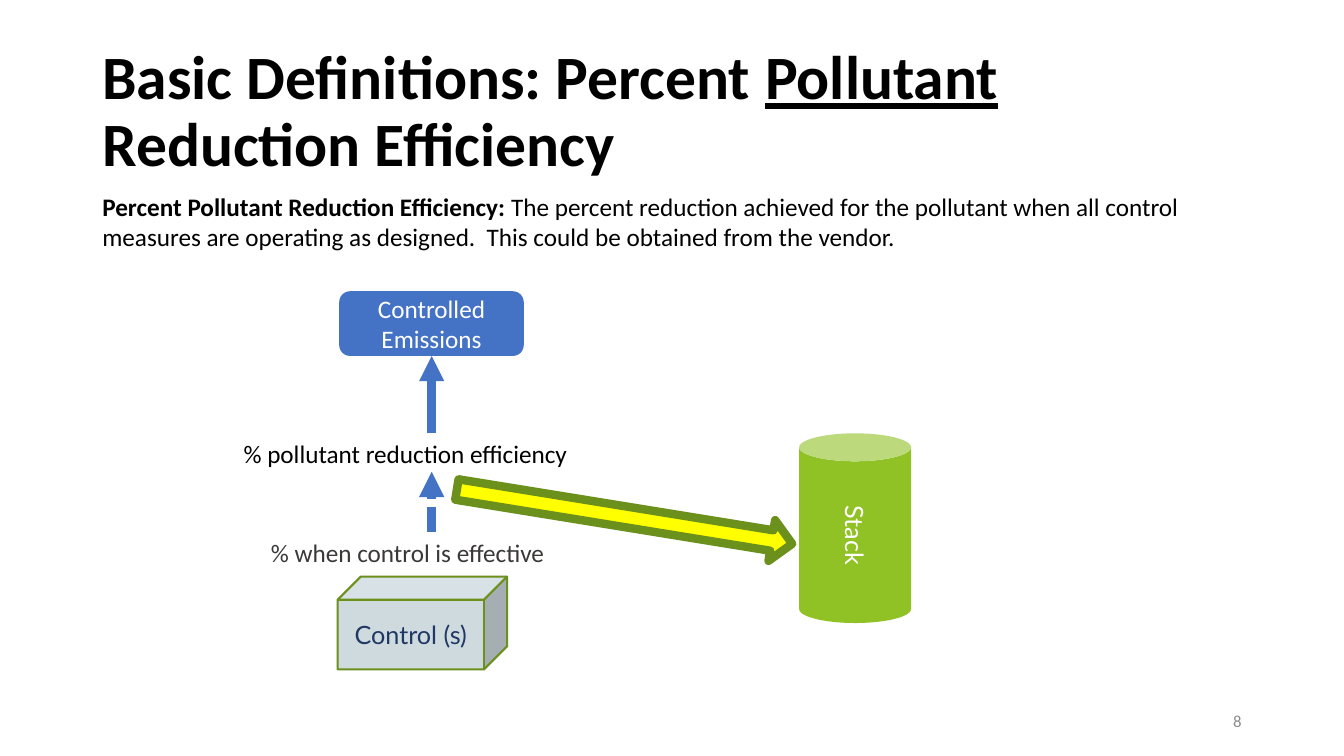
from lxml import etree
from pptx import Presentation
from pptx.dml.color import RGBColor
from pptx.enum.dml import MSO_LINE
from pptx.enum.shapes import MSO_CONNECTOR, MSO_SHAPE
from pptx.enum.text import MSO_ANCHOR, PP_ALIGN
from pptx.oxml.ns import qn
from pptx.util import Cm, Pt

COLORS = {
    "black": "000000", "white": "FFFFFF", "number": "8C8C8C",
    "label": "3B3838", "navy": "203864", "blue": "4472C4",
    "green": "90C226", "dark_green": "6B901C", "steel": "CFDADF",
    "yellow": "FFFF00",
}
TOP, MIDDLE = MSO_ANCHOR.TOP, MSO_ANCHOR.MIDDLE
LEFT, CENTER, RIGHT = PP_ALIGN.LEFT, PP_ALIGN.CENTER, PP_ALIGN.RIGHT
STRAIGHT = MSO_CONNECTOR.STRAIGHT
SQUARE_DOT = MSO_LINE.SQUARE_DOT
CUBE, CAN = MSO_SHAPE.CUBE, MSO_SHAPE.CAN
ROUNDED, RIGHT_ARROW = MSO_SHAPE.ROUNDED_RECTANGLE, MSO_SHAPE.RIGHT_ARROW


def rgb(name):
    return RGBColor.from_string(COLORS[name])


def to_cm(box):
    return [Cm(length) for length in box]


def write_text(shape, runs, size, color, font="Calibri", align=LEFT, anchor=TOP):
    """Fill a shape with one paragraph and return that paragraph."""
    frame = shape.text_frame
    frame.word_wrap = True
    frame.vertical_anchor = anchor
    paragraph = frame.paragraphs[0]
    paragraph.alignment = align
    paragraph.font.size = Pt(size)
    paragraph.font.name = font
    paragraph.font.color.rgb = rgb(color)
    for text in runs:
        paragraph.add_run().text = text
    return paragraph


def add_text(slide, box, runs, size, color, **options):
    return write_text(slide.shapes.add_textbox(*to_cm(box)), runs, size, color, **options)


def add_block(slide, kind, box, fill, line=None, line_width=1.5):
    shape = slide.shapes.add_shape(kind, *to_cm(box))
    shape.shadow.inherit = False
    shape.fill.solid()
    shape.fill.fore_color.rgb = rgb(fill)
    if line:
        shape.line.color.rgb = rgb(line)
        shape.line.width = Pt(line_width)
    else:
        shape.line.fill.background()
    return shape


def add_up_arrow(slide, x, bottom, top, dash=None):
    arrow = slide.shapes.add_connector(STRAIGHT, *to_cm((x, bottom, x, top)))
    arrow.line.color.rgb = rgb("blue")
    arrow.line.width = Pt(6)
    if dash:
        arrow.line.dash_style = dash
    properties = arrow._element.spPr
    etree.SubElement(properties.find(qn("a:ln")), qn("a:tailEnd"), type="triangle")
    etree.SubElement(properties, qn("a:effectLst"))


def add_title(slide, box):
    runs = ["Basic Definitions: Percent ", "Pollutant", " Reduction Efficiency"]
    paragraph = add_text(slide, box, runs, 44, "black", anchor=MIDDLE)
    paragraph.line_spacing = 0.9
    paragraph.font.bold = True
    paragraph.runs[1].font.underline = True


def add_definition(slide, box):
    runs = [
        "Percent Pollutant Reduction Efficiency: ",
        "The percent reduction achieved for the pollutant when all control measures "
        "are operating as designed.  This could be obtained from the vendor.",
    ]
    paragraph = add_text(slide, box, runs, 18, "black")
    paragraph.runs[0].font.bold = True


def add_control_flow(slide, box):
    """Column that rises from the control to the controlled emissions."""
    left, top, width, height = box
    center = left + width / 2
    label_height = 1.02
    efficiency_top, effective_top = top + 3.58, top + 6.07

    # Control at the foot
    control = add_block(slide, CUBE, (left + 2.62, top + height - 2.34, 4.27, 2.34),
                        "steel", "dark_green")
    write_text(control, ["Control (s)"], 18, "navy", "Lato", CENTER, MIDDLE)

    # Emissions at the head
    emissions_height = 1.63
    emissions = add_block(slide, ROUNDED, (center - 2.33, top, 4.65, emissions_height), "blue")
    write_text(emissions, ["Controlled Emissions"], 18, "white", align=CENTER, anchor=MIDDLE)

    # Arrows and the labels between them
    add_up_arrow(slide, center, effective_top, efficiency_top + label_height - 0.05, SQUARE_DOT)
    add_up_arrow(slide, center, efficiency_top, top + emissions_height)
    add_text(slide, (center - 4.3, effective_top, 8.6, label_height),
             ["% when control is effective"], 18, "label")
    add_text(slide, (left, efficiency_top, width, label_height),
             ["% pollutant reduction efficiency"], 18, "black")


def add_stack(slide, box):
    """Stack with the sloping arrow that leads into its left side."""
    left, top, width, height = box
    stack = add_block(slide, CAN, box, "green")
    write_text(stack, ["Stack"], 18, "white", "Lato", CENTER, MIDDLE)
    stack.text_frame._txBody.bodyPr.set("vert", "vert")

    arrow = add_block(slide, RIGHT_ARROW, (left - 8.68, top + 1.58, 8.56, 1.04),
                      "yellow", "dark_green", 6)
    arrow.rotation = 9.2


def add_slide_number(slide, box):
    add_text(slide, box, ["8"], 12, "number", align=RIGHT, anchor=MIDDLE)


def main():
    presentation = Presentation()
    presentation.slide_width, presentation.slide_height = Cm(33.87), Cm(19.05)
    slide = presentation.slides.add_slide(presentation.slide_layouts[6])
    add_title(slide, (2.33, 1.01, 29.21, 3.68))
    add_definition(slide, (2.33, 4.7, 29.9, 1.8))
    add_control_flow(slide, (5.89, 7.34, 9.98, 9.53))
    add_stack(slide, (20.14, 10.92, 2.82, 4.78))
    add_slide_number(slide, (23.92, 17.65, 7.62, 1.01))
    presentation.save("out.pptx")


if __name__ == "__main__":
    main()
